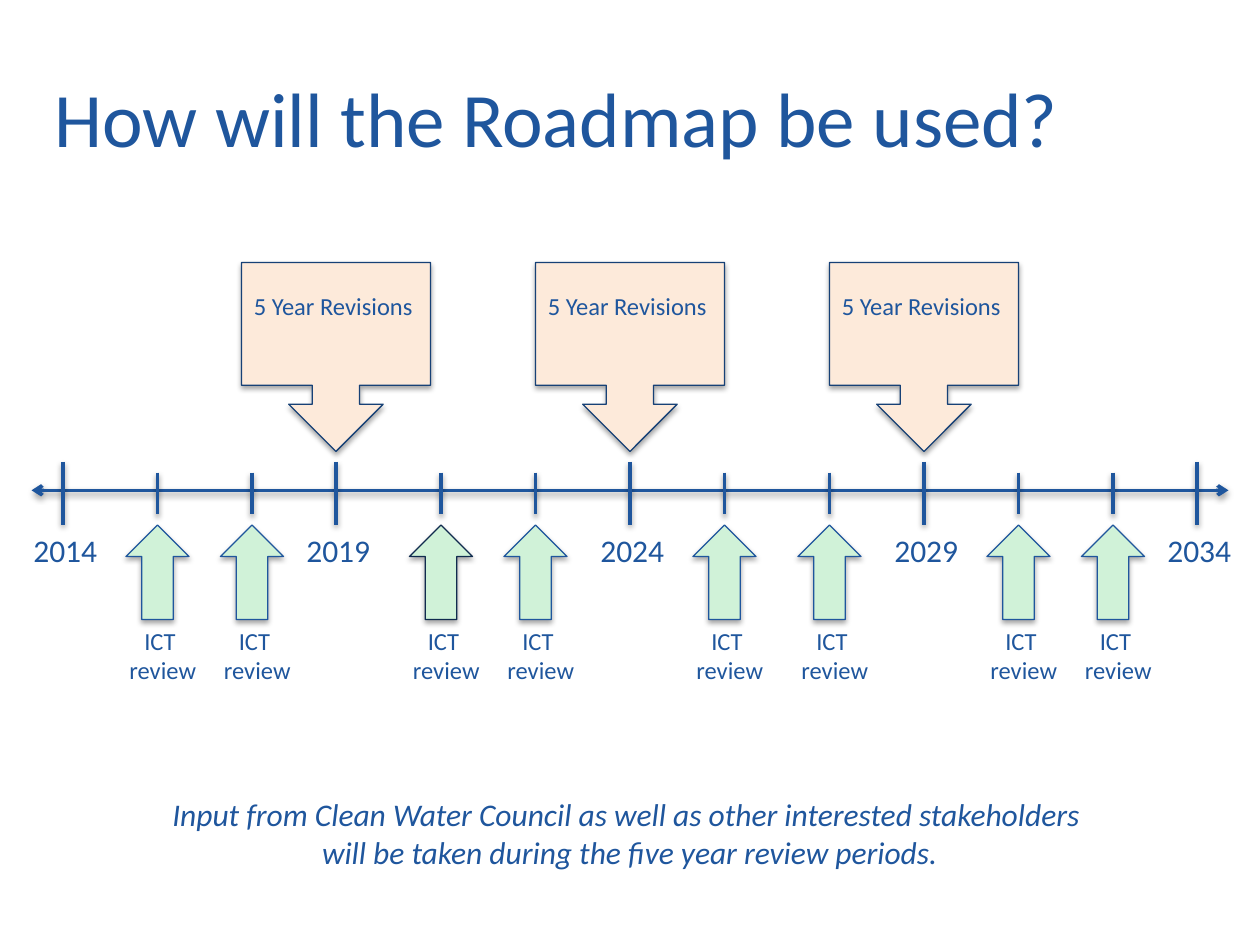
from lxml.etree import SubElement as Sub
from pptx import Presentation
from pptx.dml.color import RGBColor as RGB
from pptx.enum.shapes import MSO_CONNECTOR as Conn, MSO_SHAPE as Kind
from pptx.enum.text import MSO_ANCHOR as Anchor, MSO_AUTO_SIZE as Auto, PP_ALIGN as Align
from pptx.oxml.ns import qn
from pptx.util import Inches, Pt

COLS, ROWS = 120, 90
WIDE, HIGH = Inches(10), Inches(7.5)
BLUE, NAVY, DARK = "1F569D", "174176", "102B4E"
PEACH, MINT = "FDEADA", "D0F2D8"
YEARS = {6: "2014", 32: "2019", 60: "2024", 88: "2029", 114: "2034"}
REVISED = (32, 60, 88)
REVIEWS = (15, 24, 42, 51, 69, 79, 97, 106)
DARK_COL = 42
AXIS = 46.7


def col(n):
    return round(WIDE * n / COLS)


def row(n):
    return round(HIGH * n / ROWS)


def hue(code):
    return RGB.from_string(code)


def shade(item, alpha, dist):
    effect = Sub(item._element.spPr, qn("a:effectLst"))
    cast = Sub(effect, qn("a:outerShdw"), blurRad=str(Pt(3.1)),
               dist=str(Pt(dist)), dir="5400000", rotWithShape="0")
    black = Sub(cast, qn("a:srgbClr"), val="000000")
    Sub(black, qn("a:alpha"), val=str(alpha * 1000))


def rule(shapes, x1, y1, x2, y2, tips=False):
    line = shapes.add_connector(Conn.STRAIGHT, col(x1), row(y1), col(x2), row(y2))
    line.line.color.rgb = hue(BLUE)
    line.line.width = Pt(2)
    if tips:
        stroke = line._element.spPr.find(qn("a:ln"))
        for end in ("a:headEnd", "a:tailEnd"):
            Sub(stroke, qn(end), type="arrow")
    shade(line, 38, 1.6)


def block(shapes, kind, x, y, w, h, fill, edge):
    item = shapes.add_shape(kind, col(x), row(y), col(w), row(h))
    item.fill.solid()
    item.fill.fore_color.rgb = hue(fill)
    item.line.color.rgb = hue(edge)
    item.line.width = Pt(0.75)
    shade(item, 35, 1.8)


def text(shapes, x, y, w, h, lines, size, align=Align.LEFT, italic=False):
    box = shapes.add_textbox(col(x), row(y), col(w), row(h))
    frame = box.text_frame
    frame.word_wrap = True
    frame.auto_size = Auto.SHAPE_TO_FIT_TEXT
    for i, words in enumerate(lines):
        para = frame.add_paragraph() if i else frame.paragraphs[0]
        para.text = words
        para.alignment = align
        for run in para.runs:
            font = run.font
            font.name, font.size, font.italic = "Calibri", Pt(size), italic
            font.color.rgb = hue(BLUE)
    return frame


def title(shapes):
    frame = text(shapes, 4, 3.6, 108, 15, ["How will the Roadmap be used?"], 44)
    frame.auto_size = Auto.NONE
    frame.vertical_anchor = Anchor.MIDDLE


def year(shapes, x, name):
    rule(shapes, x, 44, x, 50)
    text(shapes, x - 4, 50, 12, 5, [name], 18)


def callout(shapes, x):
    group = shapes.add_group_shape().shapes
    block(group, Kind.DOWN_ARROW_CALLOUT, x - 9, 25, 18, 18, PEACH, NAVY)
    text(group, x - 9, 27.1, 20, 4, ["5 Year Revisions"], 14)


def review(shapes, x):
    rule(shapes, x, 45, x, 49)
    group = shapes.add_group_shape().shapes
    edge = DARK if x == DARK_COL else BLUE
    block(group, Kind.UP_ARROW, x - 3, 50, 6, 9, MINT, edge)
    text(group, x - 7, 59, 15, 6.8, ["ICT \nreview"], 14, Align.CENTER)


def main():
    deck = Presentation()
    deck.slide_width, deck.slide_height = WIDE, HIGH
    shapes = deck.slides.add_slide(deck.slide_layouts[6]).shapes
    title(shapes)
    rule(shapes, 3, AXIS, 117, AXIS, tips=True)
    for x, name in YEARS.items():
        year(shapes, x, name)
    for x in REVISED:
        callout(shapes, x)
    for x in REVIEWS:
        review(shapes, x)
    text(shapes, 3, 75.1, 114, 8.5, [
        "Input from Clean Water Council as well as other interested stakeholders ",
        "will be taken during the five year review periods.",
    ], 18, Align.CENTER, italic=True)
    deck.save("out.pptx")


if __name__ == "__main__":
    main()
